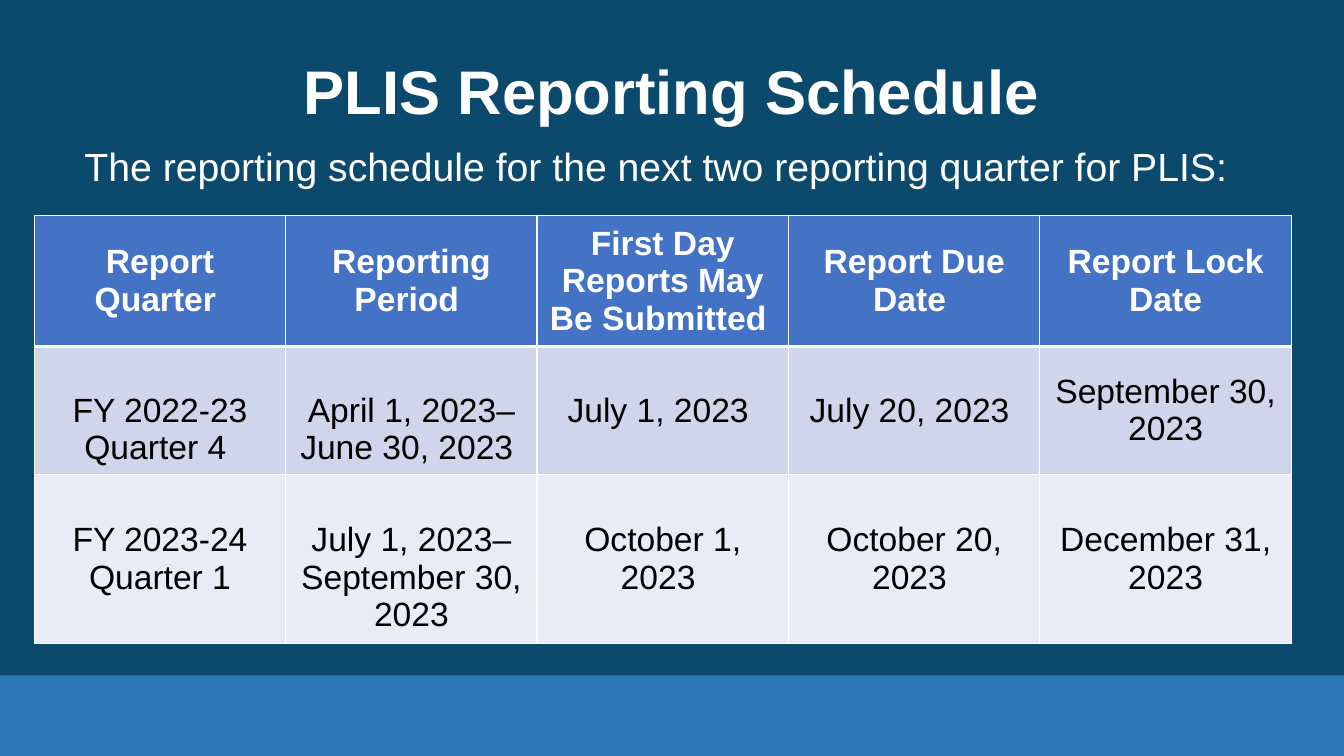
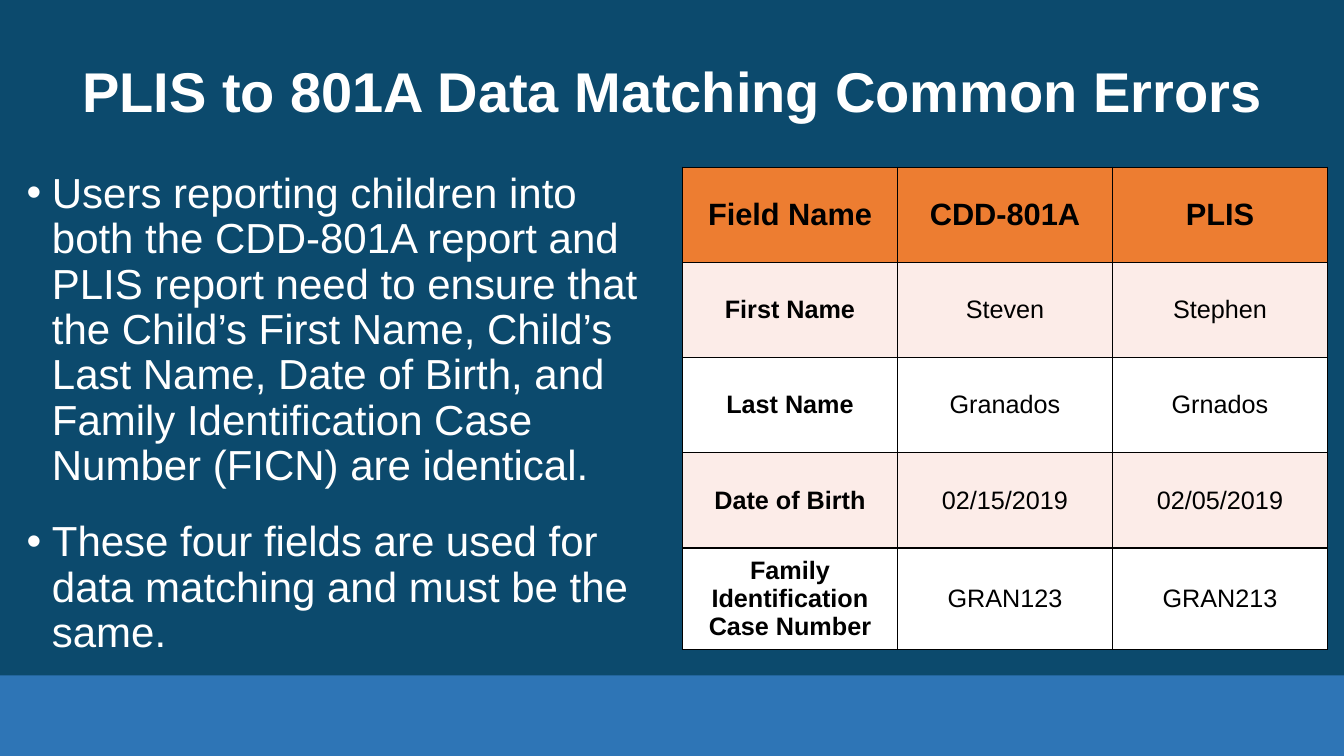
from lxml import etree
from pptx import Presentation
from pptx.dml.color import RGBColor
from pptx.enum.shapes import MSO_SHAPE
from pptx.enum.text import MSO_ANCHOR, PP_ALIGN
from pptx.oxml.ns import qn
from pptx.util import Pt

RECT = MSO_SHAPE.RECTANGLE
MIDDLE, TOP = MSO_ANCHOR.MIDDLE, MSO_ANCHOR.TOP
CENTER, LEFT = PP_ALIGN.CENTER, PP_ALIGN.LEFT
WIDTH, HEIGHT = 960, 540
BAND_HEIGHT = 57.6
FONT = "Arial"
COLORS = {
    "navy": "0C4A6D", "band": "2E75B6", "white": "FFFFFF", "black": "000000",
    "blue": "4472C4", "blue_mid": "CFD5EA", "blue_pale": "E9EBF5",
    "orange": "ED7D31", "pink": "FCECE8",
}


def rgb(name):
    return RGBColor.from_string(COLORS[name])


class Deck:
    """Holds the shared style and the current slide."""

    def __init__(self):
        self.prs = Presentation()
        self.prs.slide_width, self.prs.slide_height = Pt(WIDTH), Pt(HEIGHT)
        fill = self.prs.slide_master.background.fill
        fill.solid()
        fill.fore_color.rgb = rgb("navy")

    def slide(self, title, size):
        self.s = self.prs.slides.add_slide(self.prs.slide_layouts[6])
        band = self.s.shapes.add_shape(
            RECT, 0, Pt(HEIGHT - BAND_HEIGHT), Pt(WIDTH), Pt(BAND_HEIGHT))
        band.shadow.inherit = False
        band.fill.solid()
        band.fill.fore_color.rgb = rgb("band")
        band.line.fill.background()
        self.text((6, 15.5, 948, 104.4), [title], size, True, CENTER, MIDDLE)

    def style(self, p, size, color, bold, align):
        p.alignment = align
        p.font.name, p.font.size, p.font.bold = FONT, Pt(size), bold
        p.font.color.rgb = rgb(color)

    def text(self, box, lines, size, bold=False, align=LEFT, anchor=TOP,
             bullets=False):
        sp = self.s.shapes.add_textbox(*map(Pt, box))
        tf = sp.text_frame
        tf.word_wrap = True
        tf.vertical_anchor = anchor
        for i, line in enumerate(lines):
            p = tf.paragraphs[0] if i == 0 else tf.add_paragraph()
            p.text = line
            p.line_spacing = 0.9
            self.style(p, size, "white", bold, align)
            if i:
                p.space_before = Pt(22)
            if bullets:
                self.bullet(p)
        return sp

    def bullet(self, p):
        pPr = p._p.get_or_add_pPr()
        pPr.set("marL", str(Pt(18)))
        pPr.set("indent", str(Pt(-18)))
        font = etree.Element(qn("a:buFont"), typeface=FONT)
        char = etree.Element(qn("a:buChar"), char="•")
        pPr.find(qn("a:defRPr")).addprevious(font)
        font.addnext(char)

    def borders(self, cell, color, widths):
        tcPr = cell._tc.get_or_add_tcPr()
        for side, width in zip("LRTB", widths):
            ln = etree.SubElement(tcPr, qn(f"a:ln{side}"), w=str(Pt(width)))
            solid = etree.SubElement(ln, qn("a:solidFill"))
            etree.SubElement(solid, qn("a:srgbClr"), val=COLORS[color])

    def table(self, box, heights, rows, fills, line, rule, font):
        frame = self.s.shapes.add_table(
            len(rows), len(rows[0]), *map(Pt, box))
        table = frame.table
        for column in table.columns:
            column.width = Pt(box[2] / len(rows[0]))
        for r, (height, row, fill) in enumerate(zip(heights, rows, fills)):
            table.rows[r].height = Pt(height)
            for c, value in enumerate(row):
                cell = table.cell(r, c)
                cell.vertical_anchor = MIDDLE
                cell.text = value
                self.style(cell.text_frame.paragraphs[0], *font(r, c), CENTER)
                self.borders(cell, line, (1, 1, rule if r == 1 else 1,
                                          rule if r == 0 else 1))
                cell.fill.solid()
                cell.fill.fore_color.rgb = rgb(fill)
        return table


def schedule_slide(deck):
    deck.slide("PLIS Reporting Schedule", 44)
    deck.text((53.3, 102.2, 900, 91.4),
              ["The reporting schedule for the next two reporting quarter "
               "for PLIS:"], 28)
    rows = [
        ("Report Quarter ", "Reporting Period ",
         "First Day Reports May Be Submitted ", "Report Due Date ",
         "Report Lock Date"),
        ("FY 2022-23 Quarter 4 ", "April 1, 2023–June 30, 2023 ",
         "July 1, 2023 ", "July 20, 2023 ", "September 30, 2023"),
        ("FY 2023-24 Quarter 1", "July 1, 2023–September 30, 2023",
         "October 1, 2023 ", "October 20, 2023 ", "December 31, 2023"),
    ]
    table = deck.table(
        (24.5, 153.8, 898, 289), (87.4, 87.4, 114.2), rows,
        ("blue", "blue_mid", "blue_pale"), "white", 3,
        lambda r, c: (24, "black" if r else "white", r == 0))
    for r, c in ((1, 0), (1, 1), (2, 1)):
        table.cell(r, c).margin_top = Pt(30.4)


def errors_slide(deck):
    deck.slide("PLIS to 801A Data Matching Common Errors", 40)
    deck.text((12, 119.5, 461, 360), [
        "Users reporting children into both the CDD-801A report and PLIS "
        "report need to ensure that the Child’s First Name, Child’s Last "
        "Name, Date of Birth, and Family Identification Case Number (FICN) "
        "are identical.",
        "These four fields are used for data matching and must be the same.",
    ], 30, bullets=True)
    rows = [
        ("Field Name", "CDD-801A", "PLIS"),
        ("First Name", "Steven", "Stephen"),
        ("Last Name", "Granados", "Grnados"),
        ("Date of Birth", "02/15/2019", "02/05/2019"),
        ("Family Identification Case Number", "GRAN123", "GRAN213"),
    ]
    deck.table(
        (487.5, 119.5, 460.8, 344.7), [68] * 4 + [72.7], rows,
        ("orange", "pink", "white", "pink", "white"), "black", 1,
        lambda r, c: (18 if r else 22, "black", r == 0 or c == 0))


def main():
    deck = Deck()
    schedule_slide(deck)
    errors_slide(deck)
    deck.prs.save("out.pptx")


if __name__ == "__main__":
    main()
